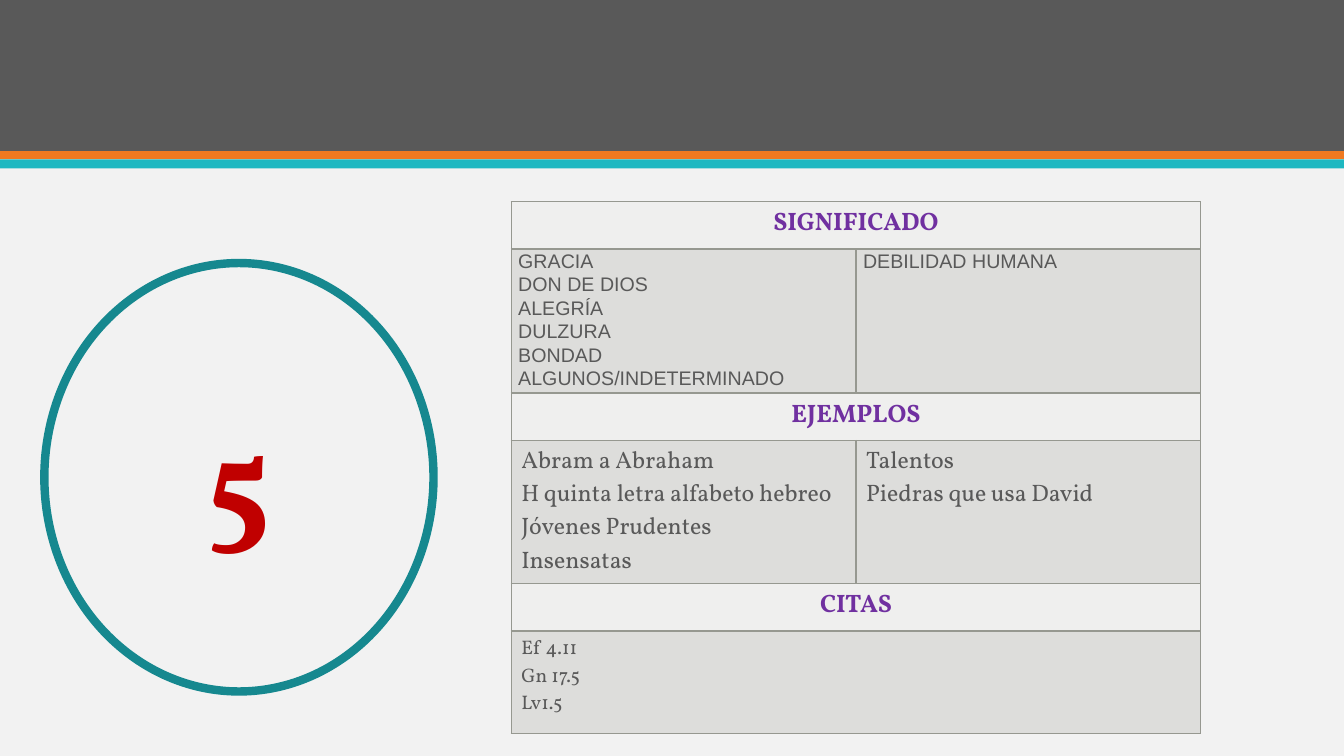
"""Build the slide on the meaning of the number five."""
from dataclasses import dataclass

from lxml import etree
from pptx import Presentation
from pptx import util as u
from pptx.dml.color import RGBColor
from pptx.enum import shapes, text
from pptx.oxml import ns

SCALE = 9144


@dataclass(frozen=True)
class Theme:
    """Colours, fonts and type sizes of the slide."""
    back: str = "F2F2F2"
    dark: str = "595959"
    orange: str = "EF7920"
    cyan: str = "1EB8C1"
    teal: str = "16888F"
    red: str = "C00000"
    purple: str = "7030A0"
    pale: str = "EFEFEE"
    grey: str = "DDDDDB"
    rule: str = "969890"
    serif: str = "Vollkorn"
    sans: str = "Arial"
    digit: int = 96
    head: int = 18
    list: int = 17
    small: int = 14


THEME = Theme()

HEADS = ("SIGNIFICADO", "EJEMPLOS", "CITAS")
MEANS = (
    ("GRACIA", "DON DE DIOS", "ALEGRÍA", "DULZURA", "BONDAD", "ALGUNOS/INDETERMINADO"),
    ("DEBILIDAD HUMANA",),
)
CASES = (
    ("Abram a Abraham", "H quinta letra alfabeto hebreo", "Jóvenes Prudentes", "Insensatas"),
    ("Talentos", "Piedras que usa David"),
)
CITES = (("Ef 4.11", "Gn 17.5", "Lv1.5"),)


def px(num):
    """Turn px into EMU."""
    return u.Emu(num * SCALE)


def rgb(code):
    """Turn a hex code into a colour."""
    return RGBColor.from_string(code)


def style(frame, size, color, font=THEME.serif, bold=False, align=None, lead=None):
    """Format every paragraph and run of a text frame."""
    for para in frame.paragraphs:
        para.alignment = align
        para.line_spacing = lead
        for run in para.runs:
            run.font.size = u.Pt(size)
            run.font.name = font
            run.font.bold = bold
            run.font.color.rgb = rgb(color)


def bands(slide, box):
    """Stack the dark header and its two thin stripes."""
    left, top, width, _ = box
    for tall, color in ((150, THEME.dark), (8, THEME.orange), (9, THEME.cyan)):
        band = slide.shapes.add_shape(
            shapes.MSO_SHAPE.RECTANGLE, px(left), px(top), px(width), px(tall))
        band.shadow.inherit = False
        band.fill.solid()
        band.fill.fore_color.rgb = rgb(color)
        band.line.fill.background()
        top += tall


def ring(slide, box):
    """Draw the ring with the large digit."""
    oval = slide.shapes.add_shape(shapes.MSO_SHAPE.OVAL, *map(px, box))
    oval.shadow.inherit = False
    oval.fill.background()
    oval.line.color.rgb = rgb(THEME.teal)
    oval.line.width = u.Pt(6)
    frame = oval.text_frame
    frame.text = "5"
    frame.vertical_anchor = text.MSO_ANCHOR.MIDDLE
    style(frame, THEME.digit, THEME.red, bold=True, align=text.PP_ALIGN.CENTER)


def paint(cell, color):
    """Give a cell its borders and fill."""
    props = cell._tc.get_or_add_tcPr()
    for side in ("lnL", "lnR", "lnT", "lnB"):
        line = etree.SubElement(props, ns.qn("a:" + side), w=str(u.Pt(1)))
        solid = etree.SubElement(line, ns.qn("a:solidFill"))
        etree.SubElement(solid, ns.qn("a:srgbClr"), val=THEME.rule)
    cell.fill.solid()
    cell.fill.fore_color.rgb = rgb(color)


def grid(slide, box):
    """Place the table of headed sections."""
    talls = (47, 143, 47, 123, 47, 102)
    table = slide.shapes.add_table(len(talls), 2, *map(px, box)).table
    for col in table.columns:
        col.width = px(box[2] // 2)
    for num, tall in enumerate(talls):
        table.rows[num].height = px(tall)
        for cell in table.rows[num].cells:
            paint(cell, THEME.grey if num % 2 else THEME.pale)

    looks = (
        dict(size=THEME.small, font=THEME.sans, align=text.PP_ALIGN.JUSTIFY, lead=1.07),
        dict(size=THEME.list),
        dict(size=THEME.small),
    )
    for part, (head, cols, look) in enumerate(zip(HEADS, (MEANS, CASES, CITES), looks)):
        row = 2 * part
        cell = table.cell(row, 0)
        cell.merge(table.cell(row, 1))
        cell.text_frame.text = head
        style(cell.text_frame, THEME.head, THEME.purple, bold=True,
              align=text.PP_ALIGN.CENTER)
        if len(cols) == 1:
            table.cell(row + 1, 0).merge(table.cell(row + 1, 1))
        for col, lines in enumerate(cols):
            cell = table.cell(row + 1, col)
            cell.text_frame.text = "\n".join(lines)
            style(cell.text_frame, color=THEME.dark, **look)
            if cols is MEANS:
                cell.margin_left = cell.margin_right = px(7)
                cell.margin_top = cell.margin_bottom = 0


def main():
    """Build and save the slide."""
    deck = Presentation()
    deck.slide_width, deck.slide_height = px(1333), px(750)
    slide = deck.slides.add_slide(deck.slide_layouts[6])
    slide.background.fill.solid()
    slide.background.fill.fore_color.rgb = rgb(THEME.back)
    bands(slide, (0, 0, 1333, 167))
    ring(slide, (44, 261, 386, 425))
    grid(slide, (507, 200, 684, 509))
    deck.save("out.pptx")


if __name__ == "__main__":
    main()
